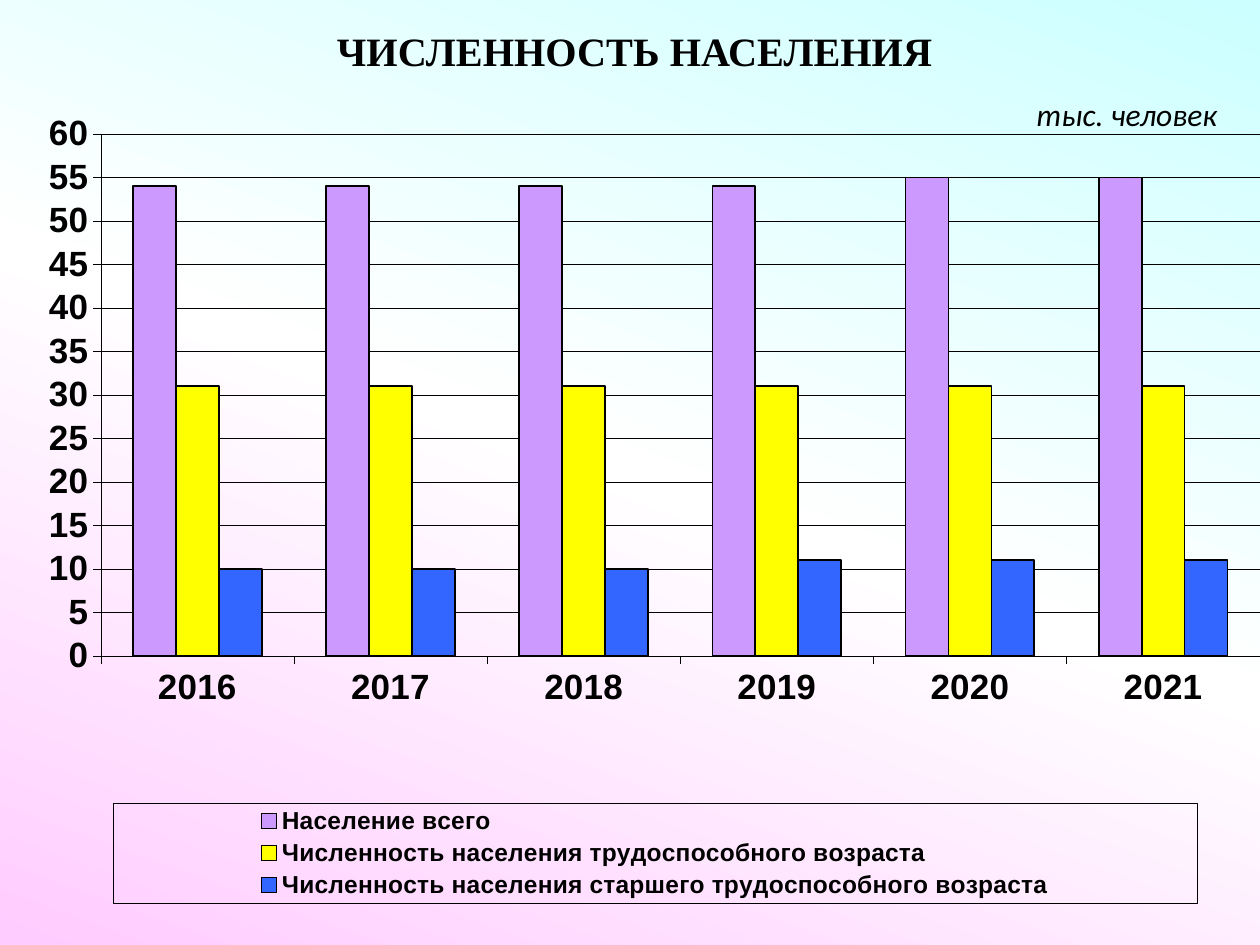
from copy import deepcopy

from lxml import etree
from pptx import Presentation
from pptx.chart.data import CategoryChartData
from pptx.dml.color import RGBColor
from pptx.enum.chart import (XL_CHART_TYPE, XL_LEGEND_POSITION,
                             XL_TICK_LABEL_POSITION, XL_TICK_MARK)
from pptx.enum.text import MSO_ANCHOR, PP_ALIGN
from pptx.oxml import parse_xml
from pptx.oxml.ns import nsdecls, qn
from pptx.util import Cm, Pt

COLUMNS = XL_CHART_TYPE.COLUMN_CLUSTERED
LEGEND_RIGHT = XL_LEGEND_POSITION.RIGHT
LABELS_LOW = XL_TICK_LABEL_POSITION.LOW
TICK_OUTSIDE = XL_TICK_MARK.OUTSIDE
TICK_NONE = XL_TICK_MARK.NONE
TOP = MSO_ANCHOR.TOP
CENTER = PP_ALIGN.CENTER

BLACK = RGBColor(0x00, 0x00, 0x00)
LILAC = RGBColor(0xCC, 0x99, 0xFF)
YELLOW = RGBColor(0xFF, 0xFF, 0x00)
BLUE = RGBColor(0x33, 0x66, 0xFF)
BACKGROUND = [
    (0, RGBColor(0xCC, 0xFF, 0xFF)),
    (0.5, RGBColor(0xFF, 0xFF, 0xFF)),
    (1, RGBColor(0xFF, 0xCC, 0xFF)),
]

TITLE = " ЧИСЛЕННОСТЬ НАСЕЛЕНИЯ"
UNIT = "тыс. человек"
YEARS = ["2016", "2017", "2018", "2019", "2020", "2021"]
SERIES = [
    ("Население всего", LILAC, [54, 54, 54, 54, 55, 55]),
    ("Численность населения трудоспособного возраста", YELLOW,
     [31, 31, 31, 31, 31, 31]),
    ("Численность населения старшего трудоспособного возраста", BLUE,
     [10, 10, 10, 11, 11, 11]),
]
# Fractions of the chart's width and height
PLOT_LAYOUT = {"x": 0.08, "y": 0.13, "w": 0.92, "h": 0.57}
LEGEND_LAYOUT = {"x": 0.09, "y": 0.86, "w": 0.86, "h": 0.11}


def format_font(font, name, size, bold=False, italic=False):
    font.name, font.size = name, Pt(size)
    font.bold, font.italic = bold, italic
    font.color.rgb = BLACK


def format_line(line, width):
    line.color.rgb = BLACK
    line.width = Pt(width)


def manual_layout(box, inner=False):
    """Return a c:layout element for a box in fractions of the chart."""
    layout = parse_xml(f"<c:layout {nsdecls('c')}><c:manualLayout/></c:layout>")
    settings = {"layoutTarget": "inner"} if inner else {}
    settings |= {"xMode": "edge", "yMode": "edge"} | box
    for tag, value in settings.items():
        etree.SubElement(layout[0], qn(f"c:{tag}")).set("val", str(value))
    return layout


def clear_shape_properties(line_fill):
    """Return a c:spPr element with no fill and the given line fill."""
    return parse_xml(f'<c:spPr {nsdecls("c", "a")}><a:noFill/>'
                     f'<a:ln w="3175">{line_fill}</a:ln></c:spPr>')


def paint_background(slide):
    fill = slide.background.fill
    fill.gradient()
    fill.gradient_angle = 250
    first = fill.gradient_stops[0]._gs
    first.addnext(deepcopy(first))
    for stop, (position, color) in zip(fill.gradient_stops, BACKGROUND):
        stop.position = position
        stop.color.rgb = color


def format_axes(chart):
    for axis in (chart.category_axis, chart.value_axis):
        format_font(axis.tick_labels.font, "Arial", 20, bold=True)
        format_line(axis.format.line, 0.25)
        axis.major_tick_mark, axis.minor_tick_mark = TICK_OUTSIDE, TICK_NONE
    chart.category_axis.tick_label_position = LABELS_LOW
    values = chart.value_axis
    values.minimum_scale, values.maximum_scale, values.major_unit = 0, 60, 5
    values.tick_labels.number_format = "0"
    values.tick_labels.number_format_is_linked = False
    format_line(values.major_gridlines.format.line, 0.25)


def add_legend(chart):
    chart.has_legend = True
    legend = chart.legend
    legend.position = LEGEND_RIGHT
    legend.include_in_layout = False
    format_font(legend.font, "Arial", 14, bold=True)
    return legend._element


def add_population_chart(slide):
    data = CategoryChartData()
    data.categories = YEARS
    for name, _, values in SERIES:
        data.add_series(name, values)
    frame = slide.shapes.add_chart(COLUMNS, 0, Cm(0.3), Cm(25.4), Cm(18.47), data)
    chart = frame.chart
    chart.has_title = False
    format_font(chart.font, "Arial", 20, bold=True)

    plot = chart.plots[0]
    plot.vary_by_categories = False
    plot.gap_width, plot.overlap = 150, 0
    for series, (_, color, _) in zip(plot.series, SERIES):
        series.format.fill.solid()
        series.format.fill.fore_color.rgb = color
        format_line(series.format.line, 1)
    format_axes(chart)

    legend = add_legend(chart)
    chart_element = chart._chartSpace.chart
    plot_area = chart_element.plotArea
    for parent in (plot_area, legend):
        for layout in parent.findall(qn("c:layout")):
            parent.remove(layout)
    plot_area.insert(0, manual_layout(PLOT_LAYOUT, inner=True))
    legend.find(qn("c:legendPos")).addnext(manual_layout(LEGEND_LAYOUT))
    legend.find(qn("c:txPr")).addprevious(clear_shape_properties(
        f'<a:solidFill><a:srgbClr val="{BLACK}"/></a:solidFill>'))
    chart_element.addnext(clear_shape_properties("<a:noFill/>"))
    return frame


def fill_title(title):
    title.left, title.top, title.width, title.height = 0, Cm(0.41), Cm(25.4), Cm(1.57)
    text_frame = title.text_frame
    text_frame.text = TITLE
    text_frame.vertical_anchor = TOP
    paragraph = text_frame.paragraphs[0]
    paragraph.alignment = CENTER
    format_font(paragraph.runs[0].font, "Times New Roman", 23, bold=True)


def add_unit(slide):
    box = slide.shapes.add_textbox(Cm(20.65), Cm(1.8), Cm(4.19), Cm(1.02))
    box.text_frame.text = UNIT
    box.text_frame.word_wrap = False
    format_font(box.text_frame.paragraphs[0].runs[0].font, "Calibri", 18, italic=True)


def main():
    presentation = Presentation()
    presentation.slide_width, presentation.slide_height = Cm(25.4), Cm(19.05)
    slide = presentation.slides.add_slide(presentation.slide_layouts[5])
    paint_background(slide)
    title = slide.shapes.title
    fill_title(title)
    chart_frame = add_population_chart(slide)
    title._element.addprevious(chart_frame._element)
    add_unit(slide)
    presentation.save("out.pptx")


if __name__ == "__main__":
    main()
